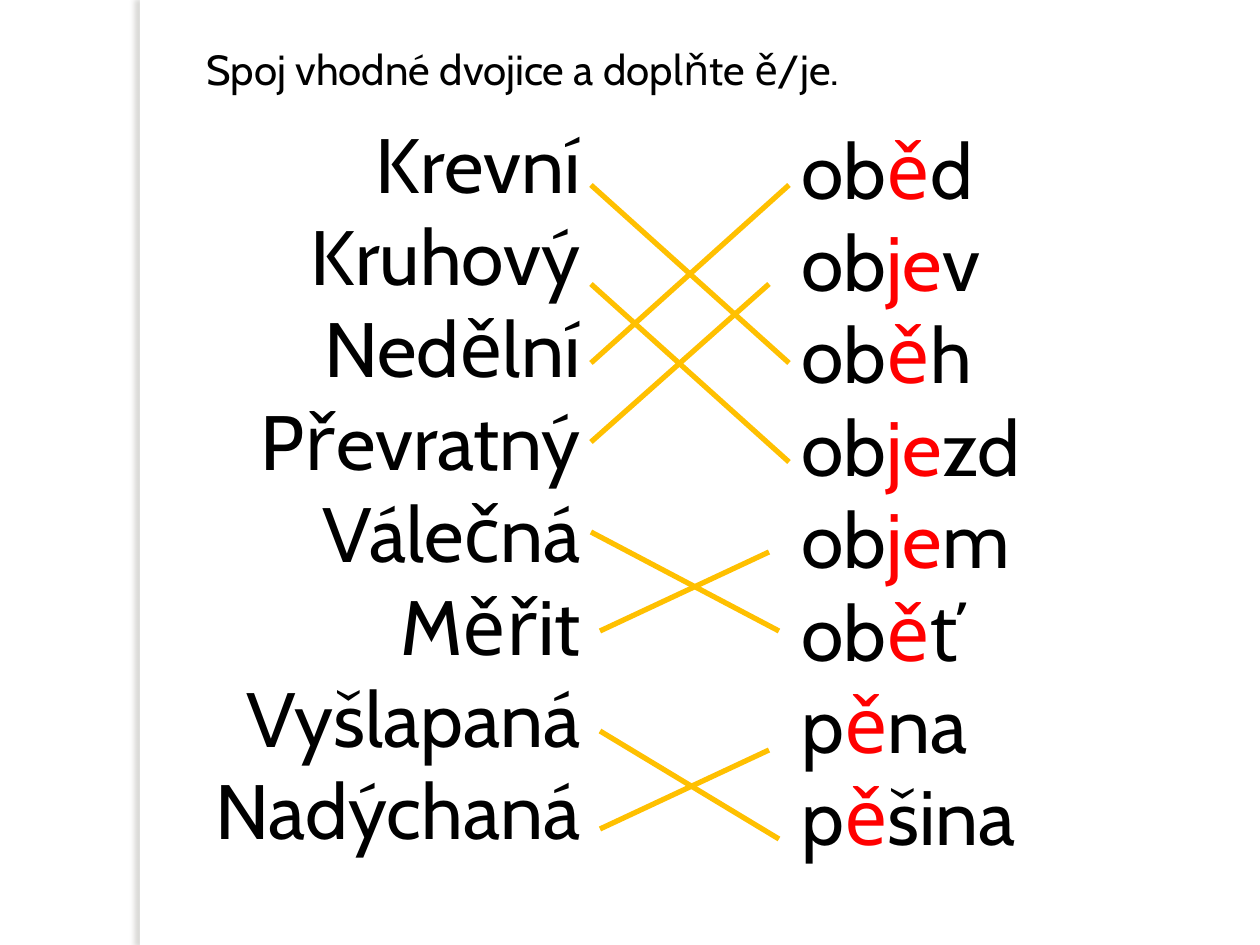
from lxml.etree import SubElement
from pptx import Presentation
from pptx.dml.color import RGBColor
from pptx.enum.shapes import MSO_CONNECTOR, MSO_SHAPE
from pptx.enum.text import MSO_AUTO_SIZE, PP_ALIGN
from pptx.oxml.ns import qn
from pptx.util import Emu, Pt

SCALE = 914400 / 126
WIDTH, HEIGHT = 1260, 945

ADJECTIVES = ["Krevní", "Kruhový", "Nedělní", "Převratný",
              "Válečná", "Měřit", "Vyšlapaná", "Nadýchaná"]
NOUNS = ["ob|ě|d", "ob|je|v", "ob|ě|h", "ob|je|zd",
         "ob|je|m", "ob|ě|ť", "p|ě|na", "p|ě|šina"]
PAIR_LINES = [
    (789, 363, 591, 185), (789, 462, 591, 284),
    (789, 185, 591, 363), (769, 284, 591, 442),
    (779, 631, 591, 532), (769, 552, 600, 631),
    (779, 839, 600, 731), (769, 750, 600, 829),
]


def px(value):
    return Emu(round(value * SCALE))


def color(code):
    return RGBColor.from_string(code)


class Worksheet:
    """Draws styled elements on the current slide."""

    font = "Cabin"
    ink = "000000"
    accent = "FF0000"
    line_color = "FFC000"

    def __init__(self, page):
        self.page = page

    def strip(self, left, top, width, height):
        shape = self.page.shapes.add_shape(
            MSO_SHAPE.RECTANGLE, px(left), px(top), px(width), px(height))
        shape.fill.solid()
        shape.fill.fore_color.rgb = color("FFFFFF")
        shape.line.fill.background()
        shape.shadow.inherit = False
        effects = shape._element.spPr.find(qn("a:effectLst"))
        shadow = SubElement(effects, qn("a:outerShdw"), blurRad=str(Pt(3)),
                            dist=str(Pt(3)), dir="10800000", rotWithShape="0")
        tint = SubElement(shadow, qn("a:srgbClr"), val="716F65")
        SubElement(tint, qn("a:alpha"), val="25000")

    def text(self, left, top, width, height, rows, size,
             align=PP_ALIGN.LEFT, wrap=False):
        box = self.page.shapes.add_textbox(
            px(left), px(top), px(width), px(height))
        frame = box.text_frame
        frame.word_wrap = wrap
        frame.auto_size = MSO_AUTO_SIZE.SHAPE_TO_FIT_TEXT
        for index, row in enumerate(rows):
            para = frame.add_paragraph() if index else frame.paragraphs[0]
            para.alignment = align
            for part, wording in enumerate(row.split("|")):
                span = para.add_run()
                span.text = wording
                for name, value in {"name": self.font, "size": Pt(size)}.items():
                    setattr(span.font, name, value)
                span.font.color.rgb = color(self.accent if part % 2 else self.ink)

    def line(self, *ends):
        connector = self.page.shapes.add_connector(
            MSO_CONNECTOR.STRAIGHT, *map(px, ends))
        connector.line.color.rgb = color(self.line_color)
        connector.line.width = Pt(3)
        SubElement(connector._element.spPr, qn("a:effectLst"))


def main():
    deck = Presentation()
    deck.slide_width, deck.slide_height = px(WIDTH), px(HEIGHT)
    sheet = Worksheet(deck.slides.add_slide(deck.slide_layouts[6]))
    sheet.strip(140, 0, 10, HEIGHT)
    sheet.text(174, 110, 419, 835, ADJECTIVES, 44, align=PP_ALIGN.RIGHT)
    sheet.text(789, 116, 436, 912, NOUNS, 44, wrap=True)
    sheet.text(194, 37, 684, 63, ["Spoj vhodné dvojice a doplňte ě/je."], 24)
    for ends in PAIR_LINES:
        sheet.line(*ends)
    deck.save("out.pptx")


if __name__ == "__main__":
    main()
